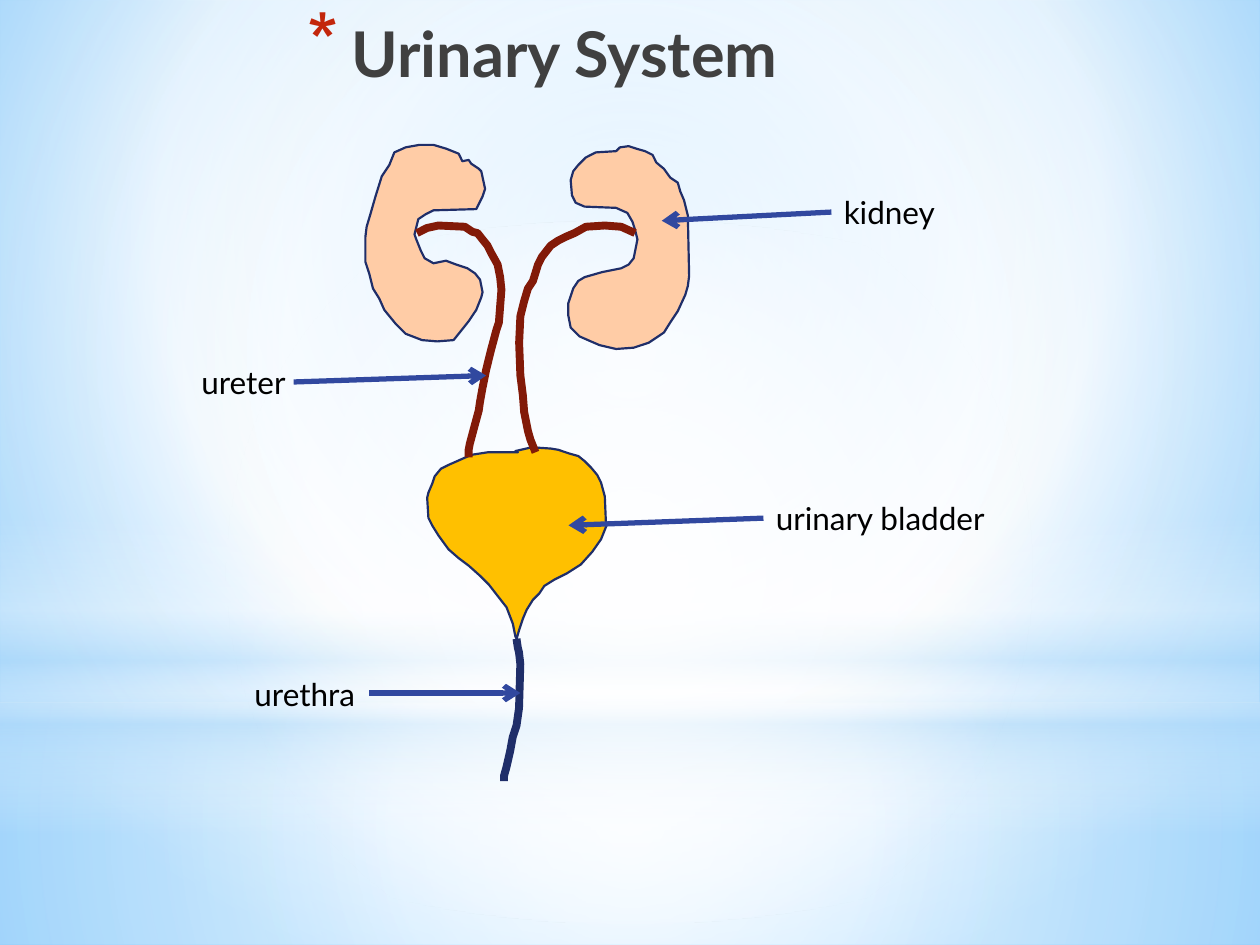
from lxml import etree
from pptx import Presentation
from pptx.dml.color import RGBColor
from pptx.enum.shapes import MSO_CONNECTOR, MSO_SHAPE
from pptx.enum.text import MSO_ANCHOR, MSO_AUTO_SIZE, PP_ALIGN
from pptx.oxml import parse_xml
from pptx.oxml.ns import nsdecls, qn
from pptx.util import Cm, Pt

SLIDE_WIDTH, SLIDE_HEIGHT = Cm(25.4), Cm(19.05)
GRID = SLIDE_WIDTH / 1000  # one step of the organ outlines
FONT = "Lato"

WHITE = RGBColor(0xFF, 0xFF, 0xFF)
PALE_BLUE = RGBColor(0xB4, 0xDC, 0xFA)
SKY = RGBColor(0x9E, 0xD5, 0xFF)
DEEP_SKY = RGBColor(0x5B, 0xB9, 0xFF)
BLACK = RGBColor(0, 0, 0)
GREY = RGBColor(0x40, 0x40, 0x40)
BULLET_RED = RGBColor(0xC3, 0x26, 0x0C)
NAVY = RGBColor(0x1F, 0x2E, 0x69)
ARROW_BLUE = RGBColor(0x31, 0x48, 0x9F)
KIDNEY = RGBColor(0xFF, 0xCC, 0xA6)
BLADDER = RGBColor(0xFF, 0xC0, 0x00)
URETER = RGBColor(0x82, 0x1A, 0x08)

CENTRE = (50, 50, 50, 50)

LEFT_KIDNEY = [
    (217, 28), (214, 22), (204, 18), (194, 15), (183, 15), (172, 17), (163, 21),
    (159, 31), (153, 40), (148, 56), (144, 70), (141, 80), (140, 88), (140, 108),
    (143, 117), (146, 129), (151, 137), (155, 146), (164, 157), (172, 165),
    (185, 170), (197, 171), (210, 170), (218, 160), (222, 155), (228, 146),
    (232, 136), (233, 132), (231, 122), (227, 117), (221, 113), (212, 110),
    (204, 107), (194, 109), (187, 105), (184, 99), (180, 89), (179, 86),
    (182, 74), (188, 70), (194, 67), (228, 66), (233, 56), (235, 50),
    (232, 36), (230, 34), (224, 30), (222, 27)]
RIGHT_KIDNEY = [
    (339, 20), (323, 21), (315, 25), (309, 31), (305, 36), (303, 43), (304, 55),
    (307, 61), (314, 64), (339, 65), (348, 69), (352, 76), (354, 82), (356, 90),
    (353, 105), (349, 110), (343, 113), (328, 116), (314, 120), (309, 123),
    (305, 129), (301, 141), (301, 150), (303, 160), (310, 167), (319, 171),
    (326, 174), (339, 177), (353, 176), (365, 172), (377, 164), (382, 156),
    (388, 147), (394, 134), (396, 127), (397, 119), (396, 71), (393, 59),
    (390, 52), (388, 45), (382, 41), (377, 34), (371, 29), (368, 23), (362, 20),
    (355, 18), (349, 16), (342, 17)]
BLADDER_OUTLINE = [
    (261, 59), (237, 59), (224, 61), (215, 65), (206, 69), (200, 72), (195, 78),
    (193, 84), (190, 91), (189, 95), (190, 111), (193, 117), (198, 125),
    (206, 136), (214, 143), (222, 149), (231, 157), (238, 164), (245, 173),
    (252, 182), (257, 195), (259, 205), (260, 207), (262, 200), (265, 191),
    (268, 184), (273, 176), (278, 171), (282, 165), (290, 160), (300, 155),
    (311, 148), (320, 138), (327, 128), (331, 118), (330, 94), (327, 83),
    (324, 77), (319, 71), (314, 66), (309, 62), (302, 60), (293, 57), (287, 56),
    (272, 55), (259, 58)]
# The bladder outline starts two inches further down the grid
BLADDER_OUTLINE = [(x, y + 200) for x, y in BLADDER_OUTLINE]
LEFT_URETER = [
    (181, 85), (189, 81), (198, 79), (219, 80), (225, 84), (229, 85), (233, 90),
    (237, 95), (240, 101), (245, 110), (247, 120), (248, 130), (246, 156),
    (244, 162), (240, 177), (236, 193), (233, 208), (231, 219), (230, 226),
    (227, 237), (223, 252), (222, 257), (222, 263)]
RIGHT_URETER = [
    (354, 85), (343, 80), (330, 79), (315, 80), (306, 85), (299, 88), (293, 91),
    (287, 95), (280, 104), (277, 110), (273, 123), (269, 129), (266, 139),
    (263, 151), (262, 172), (263, 198), (265, 214), (266, 227), (269, 242),
    (271, 249), (275, 259)]
URETHRA = [
    (260, 407), (261, 414), (262, 418), (263, 427), (262, 462), (260, 476),
    (257, 485), (255, 496), (252, 509), (250, 516), (250, 520)]

# Outline, fill, line colour, line width
ORGANS = [
    (LEFT_KIDNEY, KIDNEY, NAVY, 1.25),
    (RIGHT_KIDNEY, KIDNEY, NAVY, 1.25),
    (BLADDER_OUTLINE, BLADDER, NAVY, 1.25),
    (RIGHT_URETER, None, URETER, 4.5),
    (LEFT_URETER, None, URETER, 4.5),
    (URETHRA, None, NAVY, 4.5)]

# Text, label (left, top, width), arrow start, arrow end, in cm;
# an arrow without a start begins at the label's left side
CALLOUTS = [
    ("kidney", (12.95, 1.22, 2.54), None, (9.53, 1.91)),
    ("ureter", (0, 4.65, 2.54), (2.11, 5.16), (5.99, 5.03)),
    ("urinary bladder", (11.58, 7.39, 4.93), None, (7.65, 8.05)),
    ("urethra", (1.07, 10.95, 2.97), (3.63, 11.43), (6.68, 11.43))]


def set_gradient(fill, owner, stops, focus=None):
    """Fill owner with (position, colour, opacity) stops, downward or around focus."""
    fill.gradient()
    stop_xml = "".join(
        f'<a:gs pos="{position * 1000}"><a:srgbClr val="{colour}">'
        f'<a:alpha val="{opacity * 1000}"/></a:srgbClr></a:gs>'
        for position, colour, opacity in stops)
    if focus:
        sides = " ".join(f'{side}="{value * 1000}"' for side, value in zip("ltrb", focus))
        direction = f'<a:path path="circle"><a:fillToRect {sides}/></a:path>'
    else:
        direction = '<a:lin ang="5400000" scaled="0"/>'
    old = owner.xpath(".//a:gradFill")[0]
    old.getparent().replace(old, parse_xml(
        f'<a:gradFill {nsdecls("a")} rotWithShape="1">'
        f"<a:gsLst>{stop_xml}</a:gsLst>{direction}</a:gradFill>"))


def add_backdrop(slide, left, top, width):
    set_gradient(slide.background.fill, slide._element,
                 [(0, SKY, 100), (60, WHITE, 100), (100, DEEP_SKY, 100)], (20, 10, 20, 60))
    bands = [
        (MSO_SHAPE.RECTANGLE, 14.17, 4.88, CENTRE,
         [(0, WHITE, 91), (37, WHITE, 76), (100, PALE_BLUE, 79)]),
        (MSO_SHAPE.RECTANGLE, 0, 14.17, CENTRE,
         [(0, WHITE, 89), (48, WHITE, 62), (100, PALE_BLUE, 79)]),
        (MSO_SHAPE.RECTANGLE, 10.46, 6.35, None,
         [(0, WHITE, 0), (29, WHITE, 30), (45, PALE_BLUE, 40),
          (55, WHITE, 26), (65, PALE_BLUE, 60), (100, WHITE, 0)]),
        (MSO_SHAPE.OVAL, 4.45, 14.17, CENTRE, [(0, WHITE, 100), (56, WHITE, 0)])]
    for preset, offset, height, focus, stops in bands:
        band = slide.shapes.add_shape(preset, left, top + Cm(offset), width, Cm(height))
        band.shadow.inherit = False
        band.line.fill.background()
        set_gradient(band.fill, band._element, stops, focus)


def add_title(slide, left, top, width, height):
    title = slide.shapes.title
    slide.shapes._spTree.append(title._element)  # in front of the backdrop
    title.left, title.top, title.width, title.height = left, top, width, height
    frame = title.text_frame
    frame.text = "Urinary System"
    frame.auto_size = MSO_AUTO_SIZE.NONE
    frame.vertical_anchor = MSO_ANCHOR.MIDDLE
    paragraph = frame.paragraphs[0]
    paragraph.alignment = PP_ALIGN.CENTER
    font = paragraph.font
    font.name, font.size, font.bold = FONT, Pt(36), True
    font.color.rgb = GREY
    properties = paragraph._p.get_or_add_pPr()
    properties.set("marL", str(Cm(0.89)))
    properties.set("indent", str(-Cm(0.89)))
    bullet = [f'<a:buClr {nsdecls("a")}><a:srgbClr val="{BULLET_RED}"/></a:buClr>',
              f'<a:buSzPct {nsdecls("a")} val="128000"/>',
              f'<a:buChar {nsdecls("a")} char="*"/>']
    for position, xml in enumerate(bullet):
        properties.insert(position, parse_xml(xml))


def add_organ(slide, left, top, outline, fill, line_colour, line_width):
    builder = slide.shapes.build_freeform(*outline[0], scale=GRID)
    builder.add_line_segments(outline[1:], close=fill is not None)
    organ = builder.convert_to_shape(left, top)
    organ.shadow.inherit = False
    if fill is None:
        organ.fill.background()
    else:
        organ.fill.solid()
        organ.fill.fore_color.rgb = fill
    organ.line.color.rgb = line_colour
    organ.line.width = Pt(line_width)


def add_callout(slide, left, top, text, label_box, start, end):
    x, y, width = label_box
    label = slide.shapes.add_textbox(left + Cm(x), top + Cm(y), Cm(width), Cm(1.03))
    frame = label.text_frame
    frame.word_wrap = True
    frame.auto_size = MSO_AUTO_SIZE.SHAPE_TO_FIT_TEXT
    frame.text = text
    font = frame.paragraphs[0].font
    font.name, font.size = FONT, Pt(18)
    font.color.rgb = BLACK

    start_x, start_y = start or (x, y)
    arrow = slide.shapes.add_connector(
        MSO_CONNECTOR.STRAIGHT, left + Cm(start_x), top + Cm(start_y),
        left + Cm(end[0]), top + Cm(end[1]))
    if start is None:
        arrow.begin_connect(label, 1)
    arrow.line.color.rgb = ARROW_BLUE
    arrow.line.width = Pt(3)
    etree.SubElement(arrow.line._get_or_add_ln(), qn("a:tailEnd"), type="arrow")
    etree.SubElement(arrow._element.spPr, qn("a:effectLst"))


def add_diagram(slide, left, top):
    for organ in ORGANS:
        add_organ(slide, left, top, *organ)
    for callout in CALLOUTS:
        add_callout(slide, left, top, *callout)


def main():
    presentation = Presentation()
    presentation.slide_width, presentation.slide_height = SLIDE_WIDTH, SLIDE_HEIGHT
    slide = presentation.slides.add_slide(presentation.slide_layouts[5])
    add_backdrop(slide, 0, 0, SLIDE_WIDTH)
    add_title(slide, Cm(1.9), Cm(0.2), Cm(18.08), Cm(1.7))
    add_diagram(slide, Cm(3.81), Cm(2.54))
    presentation.save("out.pptx")


if __name__ == "__main__":
    main()
